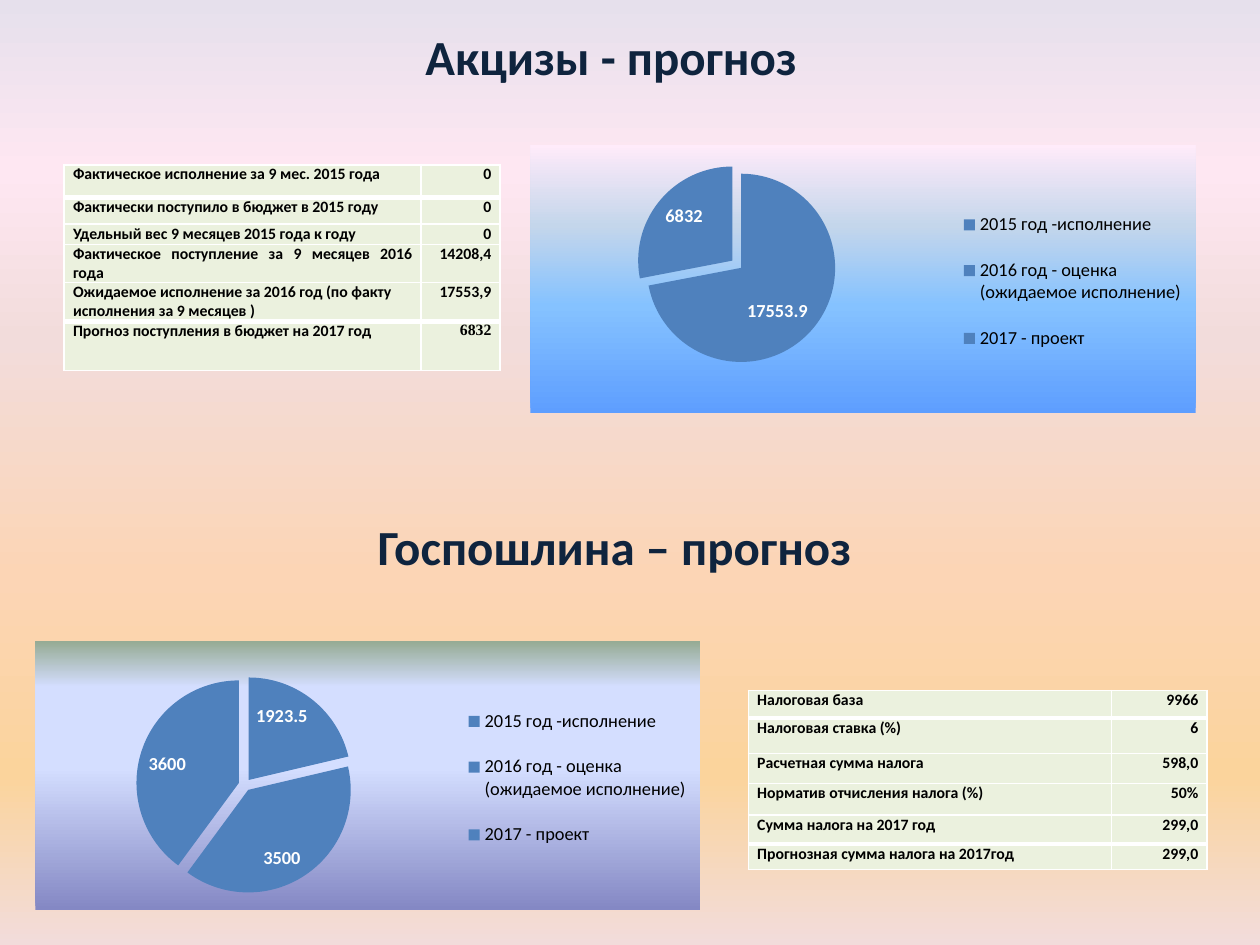
"""Build a slide with excise and state duty forecasts as two tables and two pie charts."""
from lxml import etree
from pptx import Presentation
from pptx.chart.data import CategoryChartData
from pptx.dml.color import RGBColor
from pptx.enum import chart as charts, text
from pptx.oxml import ns, parse_xml
from pptx.util import Inches, Pt

COLOURS = {"title": "0F243E", "text": "000000", "cell": "EBF1DE", "slice": "C0504D", "white": "FFFFFF"}
RGB = {name: RGBColor.from_string(value) for name, value in COLOURS.items()}
FONT = "Calibri"


def gradient(stops, angle):
    marks = "".join(
        f'<a:gs pos="{place * 1000}"><a:srgbClr val="{colour}"/></a:gs>' for place, colour in stops
    )
    return parse_xml(
        f'<a:gradFill {ns.nsdecls("a")} rotWithShape="1"><a:gsLst>{marks}</a:gsLst>'
        f'<a:lin ang="{angle * 60000}" scaled="0"/></a:gradFill>'
    )


def place_inside(parent, index, frame, inner=False):
    for old in parent.findall(ns.qn("c:layout")):
        parent.remove(old)
    layout = etree.Element(ns.qn("c:layout"))
    manual = etree.SubElement(layout, ns.qn("c:manualLayout"))
    settings = [("layoutTarget", "inner")] if inner else []
    settings += [("xMode", "edge"), ("yMode", "edge"), *zip("xywh", frame)]
    for tag, value in settings:
        etree.SubElement(manual, ns.qn(f"c:{tag}"), val=str(value))
    parent.insert(index, layout)


deck = Presentation()
deck.slide_width, deck.slide_height = Inches(10), Inches(7.5)
page = deck.slides.add_slide(deck.slide_layouts[6])

page.background.fill.solid()
background = page.background.fill._xPr
background.replace(background[0], gradient([
    (0, "E6E0EC"), (18, "FEE7F2"), (36, "F2DCDB"),
    (61, "FCD5B5"), (82, "FBD49C"), (100, "F2DCDB"),
], 90))

titles = [
    ("Акцизы - прогноз", (2.64, 0.21, 4.42, 0.47)),
    ("Госпошлина – прогноз", (2.75, 4.06, 4.25, 0.55)),
]
for title, frame in titles:
    box = page.shapes.add_textbox(*map(Inches, frame))
    box.text_frame.word_wrap = True
    box.text_frame.vertical_anchor = text.MSO_ANCHOR.MIDDLE
    para = box.text_frame.paragraphs[0]
    para.text = title
    para.alignment = text.PP_ALIGN.CENTER
    para.font.name, para.font.size, para.font.bold = FONT, Pt(28), True
    para.font.color.rgb = RGB["title"]

categories = ["2015 год -исполнение", "2016 год - оценка (ожидаемое исполнение)", "2017 - проект"]
pies = [
    ((4.21, 1.15), (0, 17553.9, 6832), (0.16, 0.07, 0.3, 0.75),
     [(0, "5E9EFF"), (40, "85C2FF"), (70, "C4D6EB"), (100, "FFEBFA")]),
    ((0.28, 5.09), (1923.5, 3500, 3600), (0.15, 0.13, 0.33, 0.81),
     [(0, "8488C4"), (53, "D4DEFF"), (83, "D4DEFF"), (100, "96AB94")]),
]
for (left, top), values, plot_frame, stops in pies:
    data = CategoryChartData()
    data.categories = categories
    data.add_series("Series 1", values)
    chart = page.shapes.add_chart(
        charts.XL_CHART_TYPE.PIE, Inches(left), Inches(top), Inches(5.28), Inches(2.13), data
    ).chart
    chart.has_title = False
    chart.font.name, chart.font.size = FONT, Pt(18)
    chart.font.color.rgb = RGB["text"]

    chart.has_legend = True
    chart.legend.position = charts.XL_LEGEND_POSITION.RIGHT
    chart.legend.include_in_layout = False
    chart.legend.font.size = Pt(10.5)
    place_inside(chart.legend._element, 1, (0.65, 0.17, 0.33, 0.68))

    plot = chart.plots[0]
    plot.vary_by_categories = False
    series = plot.series[0]
    series.format.fill.solid()
    series.format.fill.fore_color.rgb = RGB["slice"]
    explosion = etree.Element(ns.qn("c:explosion"), val="6")
    series._element.find(ns.qn("c:spPr")).addnext(explosion)

    labels = series.data_labels
    labels.show_value = True
    labels.number_format, labels.number_format_is_linked = "General;General;", False
    labels.position = charts.XL_LABEL_POSITION.INSIDE_END
    labels.font.size, labels.font.bold = Pt(10.5), True
    labels.font.color.rgb = RGB["white"]

    space = chart._chartSpace
    place_inside(space.find(".//" + ns.qn("c:plotArea")), 0, plot_frame, inner=True)
    area = etree.Element(ns.qn("c:spPr"))
    area.append(gradient(stops, 270))
    etree.SubElement(etree.SubElement(area, ns.qn("a:ln")), ns.qn("a:noFill"))
    space.find(ns.qn("c:chart")).addnext(area)

tables = [
    ((0.51, 1.31), (2.83, 0.63), (0.26, 0.21, 0.16, 0.26, 0.31, 0.39), {0, 1, 3}, [
        ("Фактическое исполнение за 9 мес. 2015 года", "0"),
        ("Фактически поступило в бюджет в 2015 году", "0"),
        ("Удельный вес 9 месяцев 2015 года к году", "0"),
        ("Фактическое поступление за 9 месяцев 2016 года", "14208,4"),
        ("Ожидаемое исполнение за 2016 год (по факту исполнения за 9 месяцев )", "17553,9"),
        ("Прогноз поступления в бюджет на 2017 год", "6832"),
    ]),
    ((5.94, 5.48), (2.88, 0.76), (0.22, 0.28, 0.24, 0.25, 0.23, 0.2), {0, 1, 2}, [
        ("Налоговая база", "9966"),
        ("Налоговая ставка (%)", "6"),
        ("Расчетная сумма налога", "598,0"),
        ("Норматив отчисления налога (%)", "50%"),
        ("Сумма налога на 2017 год", "299,0"),
        ("Прогнозная сумма налога на 2017год", "299,0"),
    ]),
]
for (left, top), widths, heights, justified, rows in tables:
    table = page.shapes.add_table(
        len(rows), 2, Inches(left), Inches(top), Inches(sum(widths)), Inches(sum(heights))
    ).table
    table.last_row = True
    for column, width in zip(table.columns, widths):
        column.width = Inches(width)
    last = len(rows) - 1
    for row, (height, entries) in enumerate(zip(heights, rows)):
        table.rows[row].height = Inches(height)
        for column, entry in enumerate(entries):
            cell = table.cell(row, column)
            cell.margin_left = cell.margin_right = Inches(0.07)
            cell.margin_top = cell.margin_bottom = 0
            para = cell.text_frame.paragraphs[0]
            para.text = entry
            if column == 1:
                para.alignment = text.PP_ALIGN.RIGHT
            else:
                para.alignment = text.PP_ALIGN.JUSTIFY if row in justified else text.PP_ALIGN.LEFT
            para.font.name = "Times New Roman" if entry == "6832" else FONT
            para.font.size, para.font.bold = Pt(9), True
            para.font.color.rgb = RGB["text"]
            thick = {"T": row in (1, last), "B": row in (0, last - 1)}
            properties = cell._tc.get_or_add_tcPr()
            for side in "LRTB":
                weight = Pt(3 if thick.get(side) else 1)
                line = etree.SubElement(properties, ns.qn(f"a:ln{side}"), w=str(weight))
                paint = etree.SubElement(line, ns.qn("a:solidFill"))
                etree.SubElement(paint, ns.qn("a:srgbClr"), val=COLOURS["white"])
            cell.fill.solid()
            cell.fill.fore_color.rgb = RGB["cell"]

deck.save("out.pptx")
